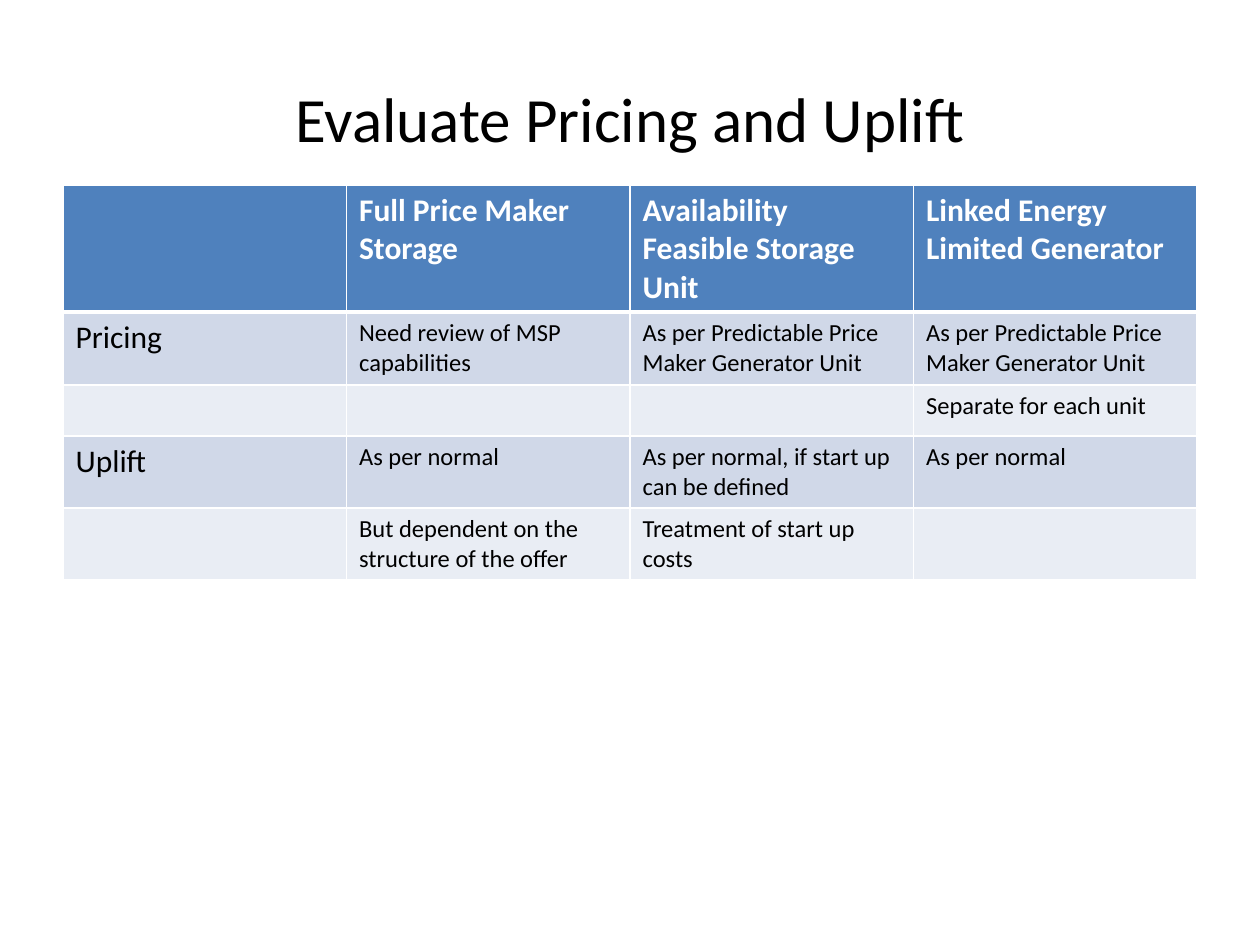
from lxml import etree
from pptx import Presentation, util as u
from pptx.dml.color import RGBColor
from pptx.enum import text
from pptx.oxml.ns import qn

HUES = {"ink": "000000", "white": "FFFFFF", "head": "4F81BD",
        "dark": "D0D8E8", "light": "E9EDF4"}
HIGHS = [127, 73, 51, 72, 72]
ROWS = [
    ["", "Full Price Maker Storage", "Availability Feasible Storage Unit",
     "Linked Energy Limited Generator"],
    ["Pricing", "Need review of MSP capabilities",
     "As per Predictable Price Maker Generator Unit",
     "As per Predictable Price Maker Generator Unit"],
    ["", "", "", "Separate for each unit"],
    ["Uplift", "As per normal", "As per normal, if start up can be defined",
     "As per normal"],
    ["", "But dependent on the structure of the offer",
     "Treatment of start up costs", ""],
]


def px(n):
    return u.Emu(round(n * 914400 / 126))


def hue(name):
    return RGBColor.from_string(HUES[name])


def write(frame, words, size=14, color="ink", bold=False, align=None):
    para = frame.paragraphs[0]
    para.alignment = align
    run = para.add_run()
    run.text = words
    font = run.font
    font.name, font.size, font.bold = "Calibri", u.Pt(size), bold
    font.color.rgb = hue(color)


def add_title(slide, words, x, y, w, h):
    frame = slide.shapes.add_textbox(px(x), px(y), px(w), px(h)).text_frame
    frame.word_wrap = True
    frame.vertical_anchor = text.MSO_ANCHOR.MIDDLE
    write(frame, words, size=36, align=text.PP_ALIGN.CENTER)


def edge(cell, side, width):
    props = cell._tc.get_or_add_tcPr()
    line = etree.SubElement(props, qn(f"a:ln{side}"), w=str(u.Pt(width)))
    fill = etree.SubElement(line, qn("a:solidFill"))
    etree.SubElement(fill, qn("a:srgbClr"), val=HUES["white"])


def style(cell, row):
    for side in "LRTB":
        thick = (row, side) in [(0, "B"), (1, "T")]
        edge(cell, side, 3 if thick else 1)
    cell.fill.solid()
    cell.fill.fore_color.rgb = hue(
        "head" if row == 0 else "dark" if row % 2 else "light")


def add_grid(slide, rows, highs, x, y, w):
    grid = slide.shapes.add_table(
        len(rows), len(rows[0]), px(x), px(y), px(w), px(sum(highs))).table
    for r, (words, high) in enumerate(zip(rows, highs)):
        grid.rows[r].height = px(high)
        for c, word in enumerate(words):
            cell = grid.cell(r, c)
            style(cell, r)
            if word:
                write(cell.text_frame, word,
                      size=18 if r == 0 or c == 0 else 14,
                      color="white" if r == 0 else "ink", bold=r == 0)


def main():
    deck = Presentation()
    deck.slide_width, deck.slide_height = px(1260), px(945)
    slide = deck.slides.add_slide(deck.slide_layouts[6])
    add_title(slide, "Evaluate Pricing and Uplift", 63, 38, 1134, 158)
    add_grid(slide, ROWS, HIGHS, 63, 185, 1134)
    deck.save("out.pptx")


if __name__ == "__main__":
    main()
